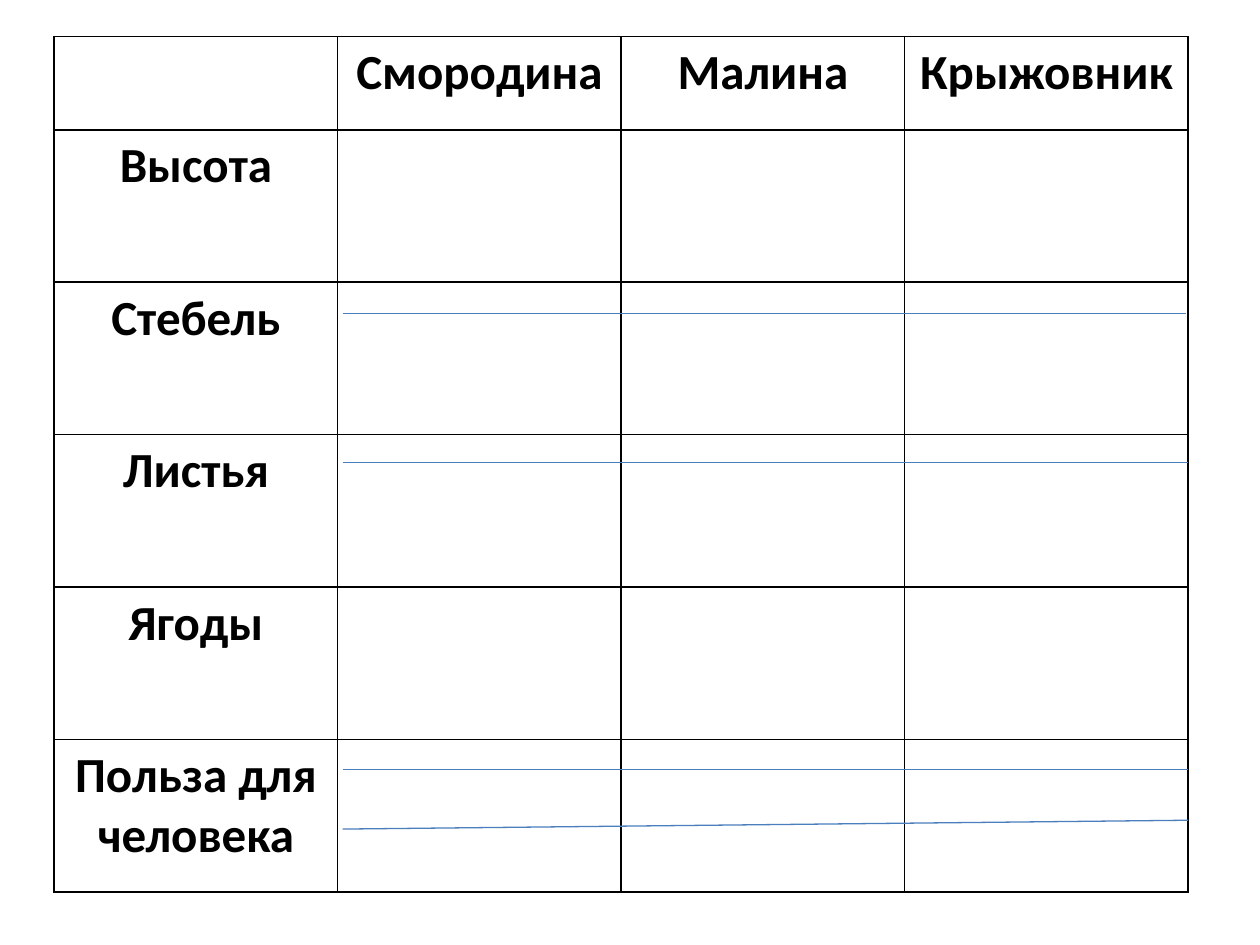
import pptx
import pptx.dml.color
import pptx.enum.shapes
import pptx.enum.text
import pptx.oxml.ns
import pptx.util
from lxml import etree
from pptx.util import Inches

BLACK = pptx.dml.color.RGBColor(0x00, 0x00, 0x00)
BLUE = pptx.dml.color.RGBColor(0x4B, 0x7E, 0xBC)

BERRIES = ["Смородина", "Малина", "Крыжовник"]
TRAITS = ["Высота", "Стебель", "Листья", "Ягоды", "Польза для человека"]
HEADER_HEIGHT = Inches(0.74)
TRAIT_HEIGHT = Inches(1.21)
WRITING_LINES = [
    (2.72, 2.49, 9.41, 2.49),
    (2.72, 3.67, 9.43, 3.67),
    (2.72, 6.11, 9.43, 6.11),
    (2.72, 6.58, 9.43, 6.51),
]
LABEL_FORMAT = {"name": "Calibri", "size": pptx.util.Pt(28), "bold": True}


def add_borders(cell):
    properties = cell._tc.get_or_add_tcPr()
    for side in ("lnL", "lnR", "lnT", "lnB"):
        border = etree.SubElement(
            properties, pptx.oxml.ns.qn(f"a:{side}"), w=str(pptx.util.Pt(1))
        )
        fill = etree.SubElement(border, pptx.oxml.ns.qn("a:solidFill"))
        etree.SubElement(fill, pptx.oxml.ns.qn("a:srgbClr"), val=str(BLACK))


def write_label(cell, text):
    para = cell.text_frame.paragraphs[0]
    para.alignment = pptx.enum.text.PP_ALIGN.CENTER
    span = para.add_run()
    span.text = text
    for attribute, value in LABEL_FORMAT.items():
        setattr(span.font, attribute, value)
    span.font.color.rgb = BLACK


def add_comparison_table(page, left, top, width):
    row_count, column_count = len(TRAITS) + 1, len(BERRIES) + 1
    height = HEADER_HEIGHT + TRAIT_HEIGHT * len(TRAITS)
    table = page.shapes.add_table(
        row_count, column_count, left, top, width, height
    ).table
    table.first_row = False
    table.horz_banding = False
    for index, row in enumerate(table.rows):
        row.height = TRAIT_HEIGHT if index else HEADER_HEIGHT
    for cell in table.iter_cells():
        add_borders(cell)
        cell.fill.background()
    for column, berry in enumerate(BERRIES, start=1):
        write_label(table.cell(0, column), berry)
    for row, trait in enumerate(TRAITS, start=1):
        write_label(table.cell(row, 0), trait)


def add_writing_line(page, *ends):
    line = page.shapes.add_connector(
        pptx.enum.shapes.MSO_CONNECTOR.STRAIGHT, *map(Inches, ends)
    )
    line.line.color.rgb = BLUE
    line.line.width = pptx.util.Pt(0.75)
    etree.SubElement(line._element.spPr, pptx.oxml.ns.qn("a:effectLst"))


def main():
    deck = pptx.Presentation()
    deck.slide_width = Inches(10)
    deck.slide_height = Inches(7.5)
    page = deck.slides.add_slide(deck.slide_layouts[6])
    add_comparison_table(page, Inches(0.43), Inches(0.29), Inches(9))
    for ends in WRITING_LINES:
        add_writing_line(page, *ends)
    deck.save("out.pptx")


if __name__ == "__main__":
    main()
